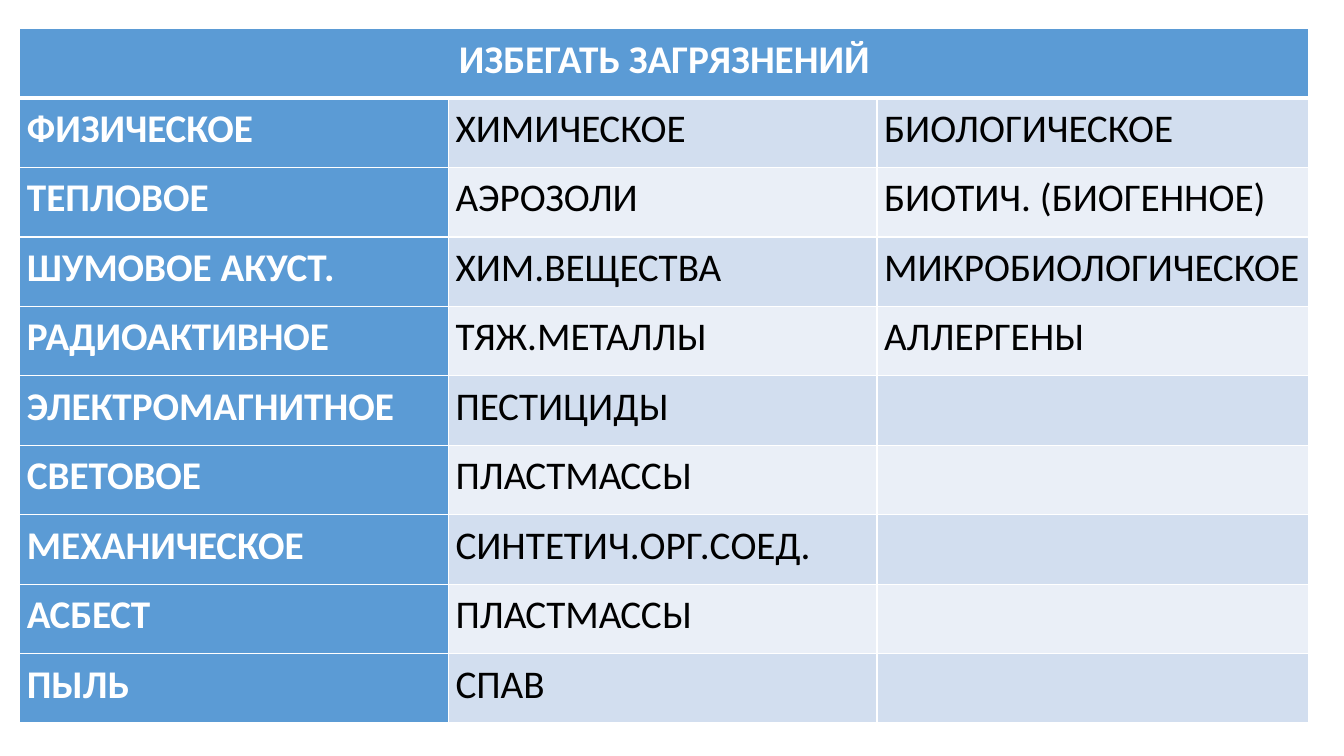
from lxml import etree
from pptx import Presentation
from pptx.dml.color import RGBColor
from pptx.enum import text
from pptx.oxml.ns import qn
from pptx.util import Cm, Pt

COLORS = {
    "accent": "5B9BD5",
    "band_dark": "D2DEEF",
    "band_light": "EAEFF7",
    "white": "FFFFFF",
    "black": "000000",
}
HEADING = "ИЗБЕГАТЬ ЗАГРЯЗНЕНИЙ"
POLLUTION = [
    ("ФИЗИЧЕСКОЕ", "ХИМИЧЕСКОЕ", "БИОЛОГИЧЕСКОЕ"),
    ("ТЕПЛОВОЕ", "АЭРОЗОЛИ", "БИОТИЧ. (БИОГЕННОЕ)"),
    ("ШУМОВОЕ АКУСТ.", "ХИМ.ВЕЩЕСТВА", "МИКРОБИОЛОГИЧЕСКОЕ"),
    ("РАДИОАКТИВНОЕ", "ТЯЖ.МЕТАЛЛЫ", "АЛЛЕРГЕНЫ"),
    ("ЭЛЕКТРОМАГНИТНОЕ", "ПЕСТИЦИДЫ", ""),
    ("СВЕТОВОЕ", "ПЛАСТМАССЫ", ""),
    ("МЕХАНИЧЕСКОЕ", "СИНТЕТИЧ.ОРГ.СОЕД.", ""),
    ("АСБЕСТ", "ПЛАСТМАССЫ", ""),
    ("ПЫЛЬ", "СПАВ", ""),
]


def rgb(name):
    return RGBColor.from_string(COLORS[name])


def set_borders(cell, top=1, bottom=1):
    """White borders; widths in points. They must precede the fill in tcPr."""
    properties = cell._tc.get_or_add_tcPr()
    widths = {"a:lnL": 1, "a:lnR": 1, "a:lnT": top, "a:lnB": bottom}
    for position, (side, width) in enumerate(widths.items()):
        border = etree.Element(qn(side), w=str(Pt(width)))
        fill = etree.SubElement(border, qn("a:solidFill"))
        etree.SubElement(fill, qn("a:srgbClr"), val=COLORS["white"])
        properties.insert(position, border)


def style_cell(cell, wording, fill, emphasized):
    cell.margin_left = cell.margin_right = Cm(0.18)
    cell.margin_top = cell.margin_bottom = 0
    cell.fill.solid()
    cell.fill.fore_color.rgb = rgb(fill)
    cell.text = wording
    paragraph = cell.text_frame.paragraphs[0]
    paragraph.line_spacing = 1.15
    paragraph.font.name = "Calibri"
    paragraph.font.size = Pt(28)
    paragraph.font.bold = emphasized
    paragraph.font.color.rgb = rgb("white" if emphasized else "black")


def add_pollution_table(slide, left, top, column_widths, row_height):
    row_count = len(POLLUTION) + 1
    table = slide.shapes.add_table(
        row_count, len(column_widths), left, top,
        sum(column_widths), row_height * row_count).table
    for column, width in zip(table.columns, column_widths):
        column.width = width
    for row in table.rows:
        row.height = row_height

    # Heading across all columns
    heading = table.cell(0, 0)
    heading.merge(table.cell(0, len(column_widths) - 1))
    style_cell(heading, HEADING, "accent", True)
    heading.text_frame.paragraphs[0].alignment = text.PP_ALIGN.CENTER
    for column in range(len(column_widths)):
        set_borders(table.cell(0, column), bottom=3)

    # Kinds of pollution: emphasized first column, banded rows
    for row, kinds in enumerate(POLLUTION, start=1):
        band = "band_dark" if row % 2 else "band_light"
        for column, kind in enumerate(kinds):
            cell = table.cell(row, column)
            first = column == 0
            style_cell(cell, kind, "accent" if first else band, first)
            set_borders(cell, top=3 if row == 1 else 1)


def main():
    deck = Presentation()
    deck.slide_width, deck.slide_height = Cm(33.87), Cm(19.05)
    slide = deck.slides.add_slide(deck.slide_layouts[6])
    add_pollution_table(slide, Cm(0.5), Cm(0.72),
                        [Cm(10.8), Cm(10.8), Cm(10.88)], Cm(1.75))
    deck.save("out.pptx")


if __name__ == "__main__":
    main()
